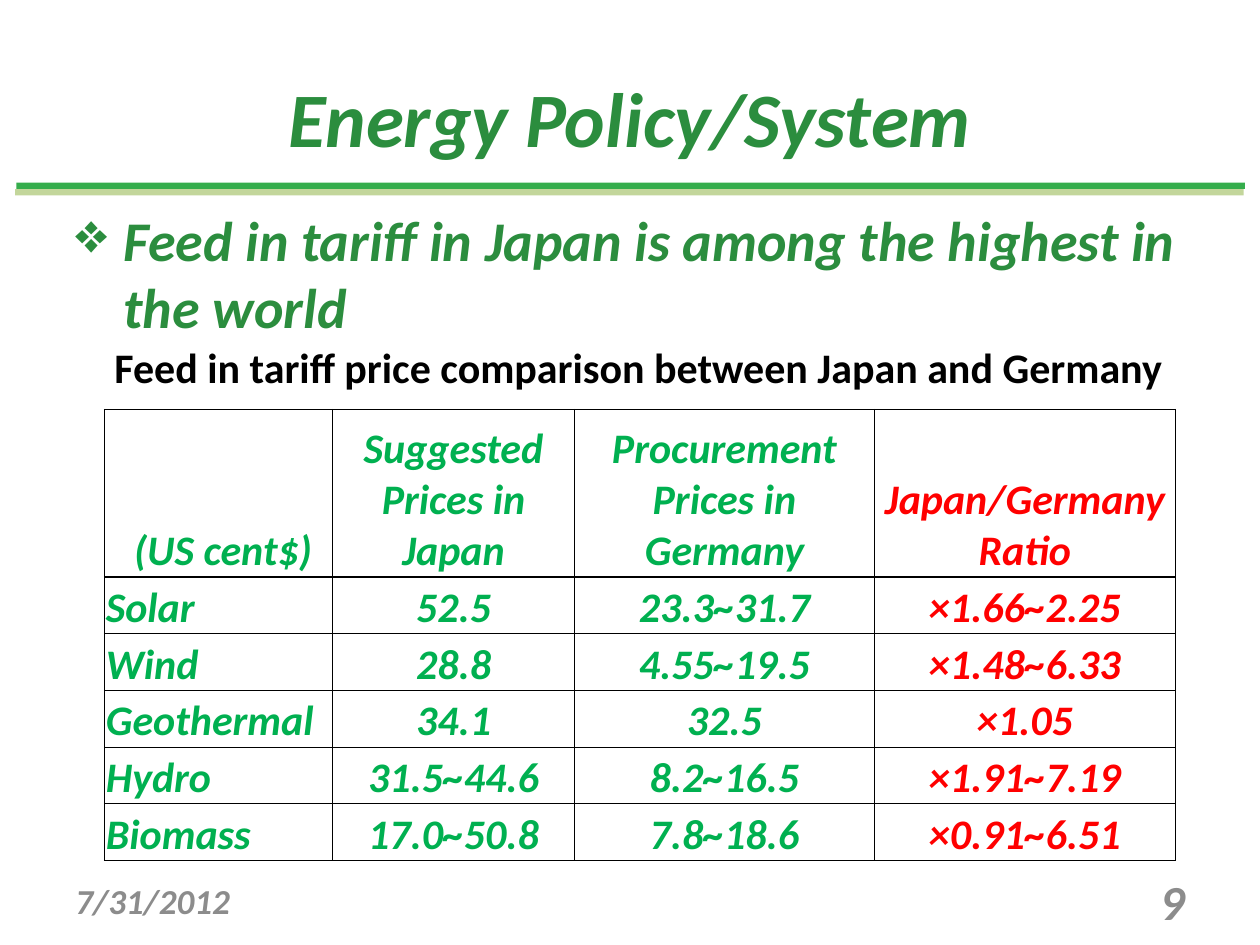
from lxml.etree import SubElement
from pptx import Presentation
from pptx.dml.color import RGBColor
from pptx.enum.shapes import MSO_SHAPE
from pptx.enum.text import MSO_ANCHOR, PP_ALIGN
from pptx.oxml.ns import qn
from pptx.util import Pt

EMU_PER_PX = 9144
FONT = "Calibri"
COLORS = {
    "title": "2B8D3E",
    "rule": "35AD4C",
    "rule_shade": "C3D69B",
    "table": "00B050",
    "ratio": "FF0000",
    "footer": "8C8C8C",
    "caption": "000000",
    "border": "000000",
}
COLUMN_WIDTHS = [181, 192, 238, 239]
HEADER_HEIGHT, ROW_HEIGHT = 133, 45
TARIFFS = [
    ["(US cent$)", "Suggested Prices in Japan", "Procurement Prices in Germany", "Japan/Germany Ratio"],
    ["Solar", "52.5", "23.3~31.7", "×1.66~2.25"],
    ["Wind", "28.8", "4.55~19.5", "×1.48~6.33"],
    ["Geothermal", "34.1", "32.5", "×1.05"],
    ["Hydro", "31.5~44.6", "8.2~16.5", "×1.91~7.19"],
    ["Biomass", "17.0~50.8", "7.8~18.6", "×0.91~6.51"],
]


def px(*lengths):
    """Turn pixel lengths into EMU."""
    return [length * EMU_PER_PX for length in lengths]


def color(name):
    """Look up a named colour."""
    return RGBColor.from_string(COLORS[name])


def write(text_frame, text, size, color_name, align=PP_ALIGN.LEFT, italic=True):
    """Set one bold paragraph and return it."""
    text_frame.text = text
    paragraph = text_frame.paragraphs[0]
    paragraph.alignment = align
    font = paragraph.runs[0].font
    font.name, font.size, font.bold, font.italic = FONT, Pt(size), True, italic
    font.color.rgb = color(color_name)
    return paragraph


def add_text(slide, box, text, size, color_name, align=PP_ALIGN.LEFT,
             anchor=MSO_ANCHOR.MIDDLE, italic=True, wrap=True):
    """Add a text box and return its paragraph."""
    text_frame = slide.shapes.add_textbox(*px(*box)).text_frame
    text_frame.word_wrap = wrap
    text_frame.vertical_anchor = anchor
    return write(text_frame, text, size, color_name, align, italic)


def add_double_rule(slide, left, top, width, height):
    """Draw the green rule with its offset lower band."""
    band = height // 2
    for x, y, name in [(left + 1, top, "rule"), (left, top + band, "rule_shade")]:
        shape = slide.shapes.add_shape(MSO_SHAPE.RECTANGLE, *px(x, y, width, band))
        shape.shadow.inherit = False
        shape.fill.solid()
        shape.fill.fore_color.rgb = color(name)
        shape.line.fill.background()


def add_bullet_text(slide, box, text):
    """Add the main statement with a diamond bullet."""
    paragraph = add_text(slide, box, text, 32, "title", anchor=MSO_ANCHOR.TOP)
    properties = paragraph._p.get_or_add_pPr()
    indent = px(38)[0]
    properties.set("marL", str(indent))
    properties.set("indent", str(-indent))
    SubElement(properties, qn("a:buChar"), char="❖")


def set_borders(cell, widths):
    """Give a cell its left, right, top and bottom lines."""
    properties = cell._tc.get_or_add_tcPr()
    for position, (side, width) in enumerate(zip("LRTB", widths)):
        line = SubElement(properties, qn(f"a:ln{side}"), w=str(Pt(width)))
        fill = SubElement(line, qn("a:solidFill"))
        SubElement(fill, qn("a:srgbClr"), val=COLORS["border"])
        properties.insert(position, line)


def add_tariff_table(slide, left, top):
    """Add the tariff comparison table."""
    last = len(TARIFFS) - 1
    height = HEADER_HEIGHT + last * ROW_HEIGHT
    frame = slide.shapes.add_table(
        len(TARIFFS), len(COLUMN_WIDTHS), *px(left, top, sum(COLUMN_WIDTHS), height))
    table = frame.table
    table.first_row = table.horz_banding = False
    for column, width in zip(table.columns, px(*COLUMN_WIDTHS)):
        column.width = width
    for row_index, values in enumerate(TARIFFS):
        table.rows[row_index].height = px(ROW_HEIGHT if row_index else HEADER_HEIGHT)[0]
        top_width = 1 if row_index < 2 else 0.5
        bottom_width = 1 if row_index in (0, last) else 0.5
        for column_index, value in enumerate(values):
            cell = table.cell(row_index, column_index)
            cell.margin_left, cell.margin_right, cell.margin_top, cell.margin_bottom = px(1, 1, 1, 0)
            cell.vertical_anchor = MSO_ANCHOR.BOTTOM
            cell.fill.background()
            is_label = row_index > 0 and column_index == 0
            name = "ratio" if column_index == 3 else "table"
            align = PP_ALIGN.LEFT if is_label else PP_ALIGN.CENTER
            write(cell.text_frame, value, 24, name, align)
            set_borders(cell, [1, 1, top_width, bottom_width])
    table.cell(0, 0).margin_left = px(8)[0]


def add_footer(slide, left, top, width, height):
    """Add the date at the left and the slide number at the right."""
    part = 233
    add_text(slide, (left, top, part, height), "7/31/2012", 20, "footer")
    add_text(slide, (left + width - part, top, part, height), "9", 28, "footer", PP_ALIGN.RIGHT)


def main():
    """Build the energy policy slide."""
    presentation = Presentation()
    presentation.slide_width, presentation.slide_height = px(1000, 750)
    slide = presentation.slides.add_slide(presentation.slide_layouts[6])
    add_double_rule(slide, 12, 145, 975, 10)
    add_text(slide, (50, 30, 900, 125), "Energy Policy/System", 44, "title", PP_ALIGN.CENTER)
    add_bullet_text(slide, (50, 158, 900, 512),
                    "Feed in tariff in Japan is among the highest in the world")
    add_footer(slide, 50, 695, 900, 40)
    add_tariff_table(slide, 83, 325)
    add_text(slide, (81, 266, 861, 50), "Feed in tariff price comparison between Japan and Germany",
             24, "caption", anchor=MSO_ANCHOR.TOP, italic=False, wrap=False)
    presentation.save("out.pptx")


if __name__ == "__main__":
    main()
